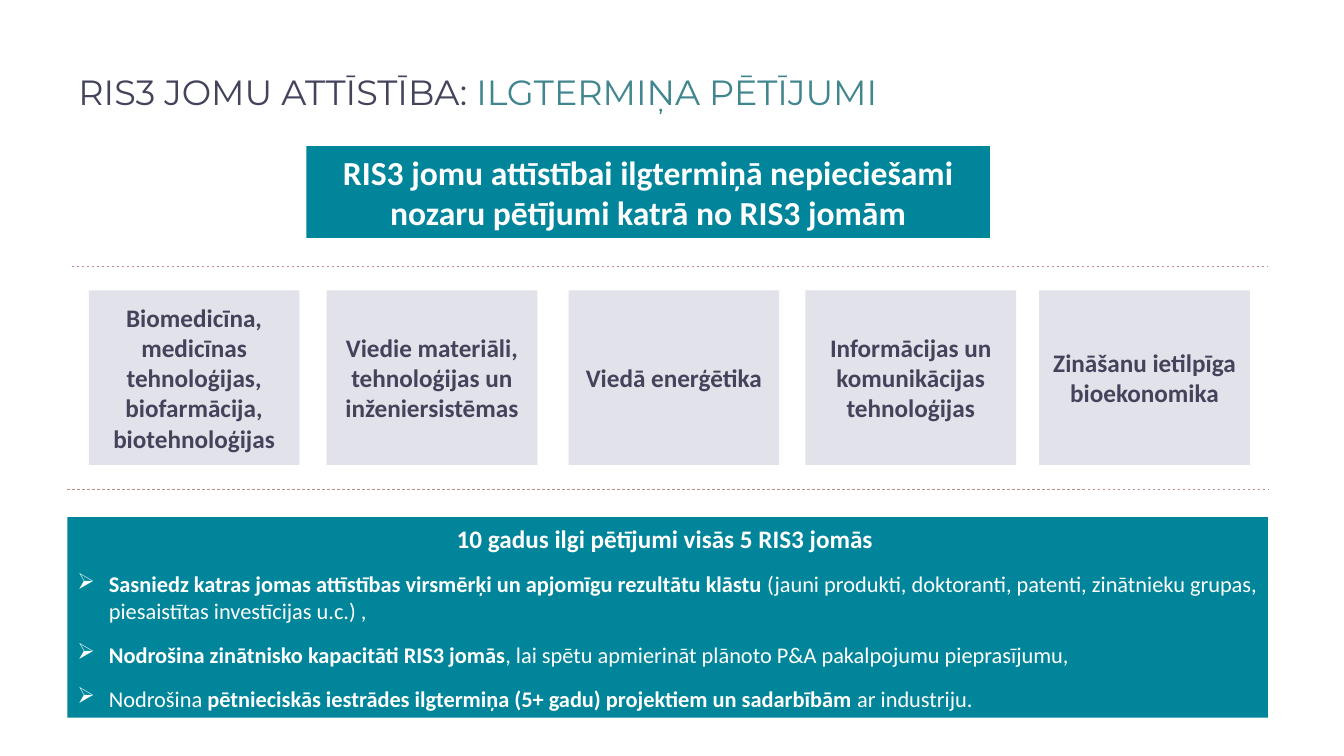
from lxml import etree
from pptx import Presentation
from pptx.dml.color import RGBColor
from pptx.enum import dml, shapes, text
from pptx.oxml.ns import qn
from pptx.util import Pt

INK, TEAL, PALE, WHITE = "43435B", "00859B", "E2E2EA", "FFFFFF"
INDENT = 22.5

FIELDS = [
    (63.4, "Biomedicīna, medicīnas tehnoloģijas, biofarmācija, biotehnoloģijas"),
    (233.3, "Viedie materiāli, tehnoloģijas un inženiersistēmas"),
    (406.1, "Viedā enerģētika"),
    (575.3, "Informācijas un komunikācijas tehnoloģijas"),
    (742.3, "Zināšanu ietilpīga bioekonomika"),
]
# Each benefit is a list of (wording, bold) spans
BENEFITS = [
    [("Sasniedz katras jomas attīstības virsmērķi un apjomīgu rezultātu klāstu ", True),
     ("(jauni produkti, doktoranti, patenti, zinātnieku grupas, "
      "piesaistītas investīcijas u.c.) ,", False)],
    [("Nodrošina zinātnisko kapacitāti RIS3 jomās", True),
     (", lai spētu apmierināt plānoto P&A pakalpojumu pieprasījumu,", False)],
    [("Nodrošina ", False),
     ("pētnieciskās iestrādes ilgtermiņa (5+ gadu) projektiem un sadarbībām ", True),
     ("ar industriju.", False)],
]


def colour(value):
    return RGBColor.from_string(value)


def add_span(para, wording, size, shade, bold=False, font="Calibri"):
    span = para.add_run()
    span.text = wording
    span.font.name = font
    span.font.size = Pt(size)
    span.font.bold = bold
    span.font.color.rgb = colour(shade)


def add_panel(page, left, top, width, height, fill):
    """Add a flat rectangle and return its text frame."""
    panel = page.shapes.add_shape(shapes.MSO_SHAPE.RECTANGLE,
                                  Pt(left), Pt(top), Pt(width), Pt(height))
    panel.shadow.inherit = False
    panel.fill.solid()
    panel.fill.fore_color.rgb = colour(fill)
    panel.line.fill.background()
    frame = panel.text_frame
    frame.word_wrap = True
    frame.vertical_anchor = text.MSO_ANCHOR.MIDDLE
    frame.paragraphs[0].alignment = text.PP_ALIGN.CENTER
    return frame


def add_title(page, left, top, width, height):
    box = page.shapes.add_textbox(Pt(left), Pt(top), Pt(width), Pt(height))
    frame = box.text_frame
    frame.word_wrap = True
    frame.vertical_anchor = text.MSO_ANCHOR.MIDDLE
    para = frame.paragraphs[0]
    para.line_spacing = 0.9
    add_span(para, "RIS3 JOMU ATTĪSTĪBA: ", 25, INK, font="Montserrat")
    add_span(para, "ILGTERMIŅA PĒTĪJUMI", 25, "41868F", font="Montserrat")


def add_banner(page, left, top, width, height):
    frame = add_panel(page, left, top, width, height, TEAL)
    frame.auto_size = text.MSO_AUTO_SIZE.SHAPE_TO_FIT_TEXT
    add_span(frame.paragraphs[0],
             "RIS3 jomu attīstībai ilgtermiņā nepieciešami "
             "nozaru pētījumi katrā no RIS3 jomām", 24, WHITE, bold=True)


def add_fields(page, top, width, height):
    for left, name in FIELDS:
        frame = add_panel(page, left, top, width, height, PALE)
        add_span(frame.paragraphs[0], name, 18, INK, bold=True)


def add_divider(page, left, right, top):
    line = page.shapes.add_connector(shapes.MSO_CONNECTOR.STRAIGHT,
                                     Pt(left), Pt(top), Pt(right), Pt(top))
    line.line.color.rgb = colour("C18C8B")
    line.line.width = Pt(0.5)
    line.line.dash_style = dml.MSO_LINE.DASH
    etree.SubElement(line._element.spPr, qn("a:effectLst"))


def add_bullet(para):
    properties = para._p.get_or_add_pPr()
    properties.set("marL", str(Pt(INDENT)))
    properties.set("indent", str(-Pt(INDENT)))
    etree.SubElement(properties, qn("a:buChar")).set("char", "➢")


def add_benefits(page, left, top, width, height):
    frame = add_panel(page, left, top, width, height, TEAL)
    frame.auto_size = text.MSO_AUTO_SIZE.SHAPE_TO_FIT_TEXT
    heading = frame.paragraphs[0]
    heading.space_after = Pt(12)
    add_span(heading, "10 gadus ilgi pētījumi visās 5 RIS3 jomās ", 18, WHITE, bold=True)
    for spans in BENEFITS:
        para = frame.add_paragraph()
        para.alignment = text.PP_ALIGN.LEFT
        para.space_after = Pt(12)
        add_bullet(para)
        for wording, bold in spans:
            add_span(para, wording, 16, WHITE, bold)


def main():
    deck = Presentation()
    deck.slide_width, deck.slide_height = Pt(960), Pt(540)
    page = deck.slides.add_slide(deck.slide_layouts[6])
    add_title(page, 49, 35.3, 828, 63.4)
    add_fields(page, 207.4, 150.5, 124.6)
    add_divider(page, 51.1, 905.8, 190.1)
    add_divider(page, 48.2, 905.8, 349.2)
    add_banner(page, 218.9, 104.4, 488.2, 65.5)
    add_benefits(page, 48.2, 369.4, 857.5, 143.3)
    deck.save("out.pptx")


if __name__ == "__main__":
    main()
